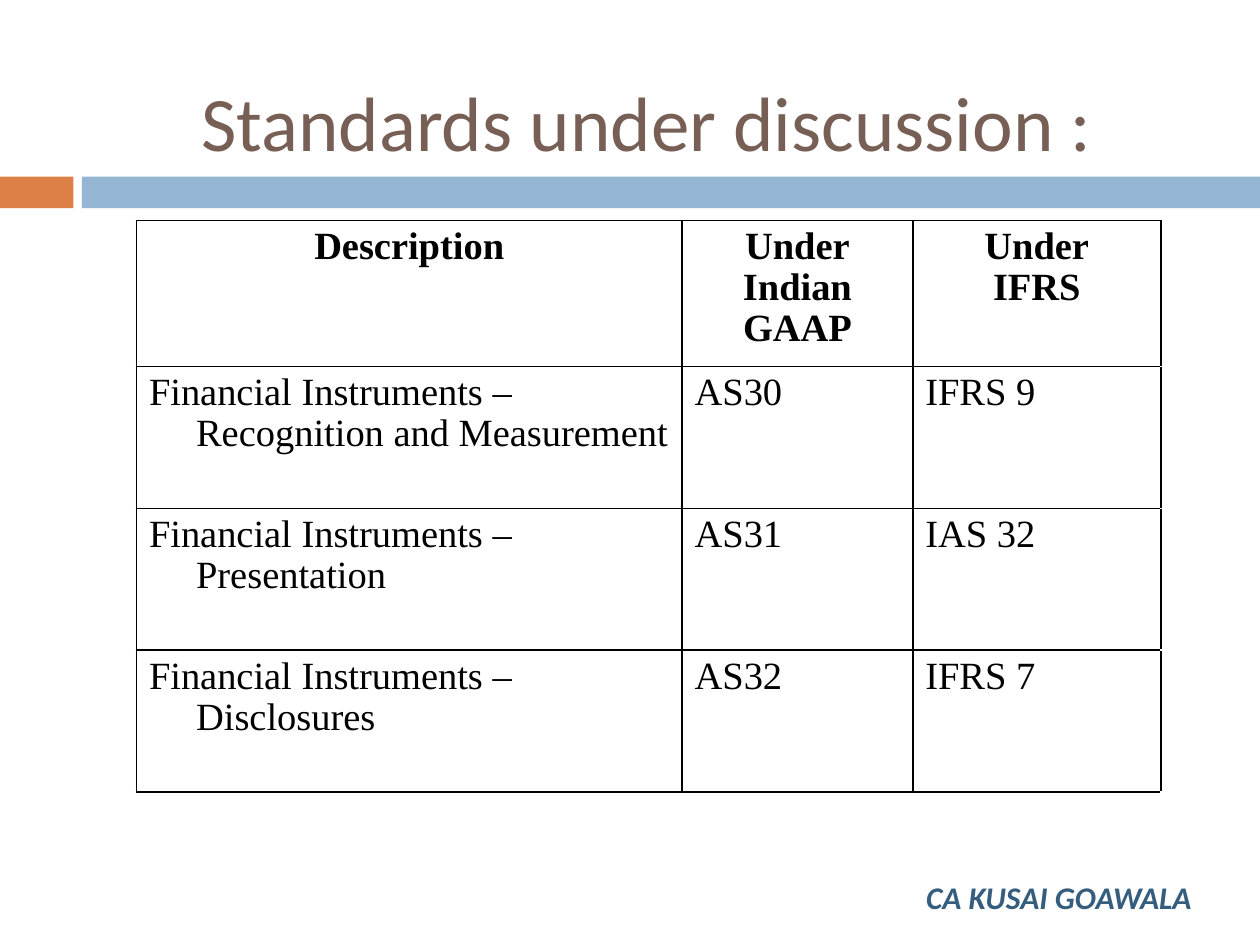
from dataclasses import dataclass

from lxml import etree
from pptx import Presentation
from pptx import util as u
from pptx.dml.color import RGBColor
from pptx.enum import shapes, text
from pptx.oxml import ns


@dataclass(frozen=True)
class Theme:
    """Colours, fonts and type sizes of the page."""
    orange: str = "DD8047"
    blue: str = "94B6D2"
    brown: str = "775F55"
    navy: str = "355D7E"
    black: str = "000000"
    sans: str = "Calibri"
    serif: str = "Times New Roman"
    title: int = 44
    body: int = 22
    footer: int = 18


THEME = Theme()
ROWS = [
    ("Description", "Under\nIndian\nGAAP", "Under\nIFRS"),
    ("Financial Instruments –Recognition and Measurement", "AS30", "IFRS 9"),
    ("Financial Instruments – Presentation", "AS31", "IAS 32"),
    ("Financial Instruments – Disclosures", "AS32", "IFRS 7"),
]
COLUMN_WIDTHS = (11, 4.65, 5, 0.58)
ROW_HEIGHT = 2.86


def write(frame, words, *, size, color, font, bold=False, italic=False,
          align=text.PP_ALIGN.LEFT, hanging=0, spacing=None):
    """Fill a text frame with one formatted paragraph per line of words."""
    for index, line in enumerate(words.split("\n")):
        para = frame.add_paragraph() if index else frame.paragraphs[0]
        para.alignment = align
        para.line_spacing = spacing
        if hanging:
            properties = para._p.get_or_add_pPr()
            properties.set("marL", str(u.Cm(hanging)))
            properties.set("indent", str(-u.Cm(hanging)))
        span = para.add_run()
        span.text = line
        span.font.name = font
        span.font.size = u.Pt(size)
        span.font.bold = bold
        span.font.italic = italic
        span.font.color.rgb = RGBColor.from_string(color)


def add_bar(page, left, width, color):
    """Draw one part of the band below the title."""
    bar = page.shapes.add_shape(shapes.MSO_SHAPE.RECTANGLE, u.Cm(left), u.Cm(3.56),
                                u.Cm(width), u.Cm(0.64))
    bar.shadow.inherit = False
    bar.fill.solid()
    bar.fill.fore_color.rgb = RGBColor.from_string(color)
    bar.line.fill.background()


def add_label(page, words, left, top, width, height, **style):
    """Place a wrapped, vertically centred line of text."""
    box = page.shapes.add_textbox(u.Cm(left), u.Cm(top), u.Cm(width), u.Cm(height))
    box.text_frame.word_wrap = True
    box.text_frame.vertical_anchor = text.MSO_ANCHOR.MIDDLE
    write(box.text_frame, words, **style)


def set_borders(cell, sides):
    """Give the named sides of a cell a thin black line."""
    properties = cell._tc.get_or_add_tcPr()
    for index, side in enumerate(sides):
        line = etree.Element(ns.qn(f"a:ln{side}"), w=str(u.Pt(1)))
        fill = etree.SubElement(line, ns.qn("a:solidFill"))
        etree.SubElement(fill, ns.qn("a:srgbClr"), val=THEME.black)
        properties.insert(index, line)


def add_standards_table(page):
    """Build the table of standards with its narrow empty end column."""
    table = page.shapes.add_table(
        len(ROWS), len(COLUMN_WIDTHS), u.Cm(2.75), u.Cm(4.45),
        u.Cm(sum(COLUMN_WIDTHS)), u.Cm(ROW_HEIGHT * len(ROWS))).table
    table.first_row = table.horz_banding = False
    for column, width in zip(table.columns, COLUMN_WIDTHS):
        column.width = u.Cm(width)
    for row_index, values in enumerate(ROWS):
        table.rows[row_index].height = u.Cm(ROW_HEIGHT)
        header = row_index == 0
        for column_index, cell in enumerate(table.rows[row_index].cells):
            cell.fill.background()
            if column_index == len(values):
                set_borders(cell, "L")
                continue
            set_borders(cell, "LRTB")
            write(cell.text_frame, values[column_index], size=THEME.body,
                  color=THEME.black, font=THEME.serif, bold=header, hanging=0.95,
                  spacing=0.96,
                  align=text.PP_ALIGN.CENTER if header else text.PP_ALIGN.LEFT)


def main():
    """Build the page and save the deck."""
    deck = Presentation()
    deck.slide_width, deck.slide_height = u.Cm(25.4), u.Cm(19.05)
    page = deck.slides.add_slide(deck.slide_layouts[6])
    add_bar(page, 0, 1.48, THEME.orange)
    add_bar(page, 1.65, 23.75, THEME.blue)
    add_label(page, "Standards under discussion :", 3.81, 0.85, 20.96, 3.18,
              size=THEME.title, color=THEME.brown, font=THEME.sans)
    add_standards_table(page)
    add_label(page, "CA KUSAI GOAWALA", 18.42, 17.58, 6.55, 1.02,
              size=THEME.footer, color=THEME.navy, font=THEME.sans,
              bold=True, italic=True)
    deck.save("out.pptx")


if __name__ == "__main__":
    main()
